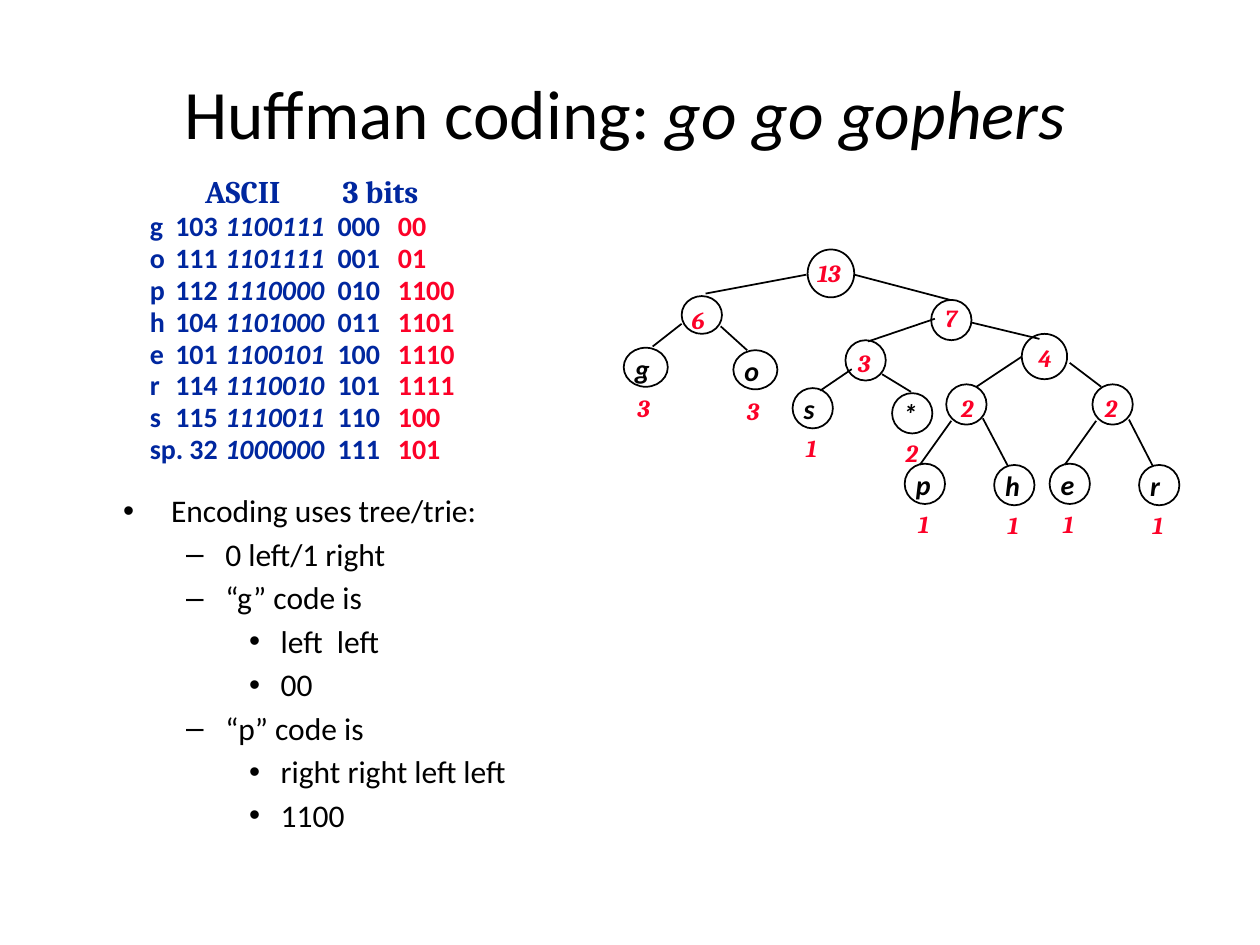
import pptx
import pptx.util
import pptx.dml.color
import pptx.enum.shapes
import pptx.enum.text
import pptx.oxml.ns
import lxml.etree

Inches = pptx.util.Inches
Pt = pptx.util.Pt
qn = pptx.oxml.ns.qn
SubElement = lxml.etree.SubElement


def paint(part, color):
    part.rgb = pptx.dml.color.RGBColor.from_string(color)


def write(para, text, color, **form):
    run = para.add_run()
    run.text = text
    paint(run.font.color, color)
    for key, value in form.items():
        setattr(run.font, key, value)


black, blue, red = "000000", "00279F", "FC0128"
letter = dict(name="Calibri", size=Pt(16), bold=True, italic=True)
number = dict(name="Cambria", size=Pt(14), bold=True, italic=True)

deck = pptx.Presentation()
deck.slide_width, deck.slide_height = Inches(10), Inches(7.5)
slide = deck.slides.add_slide(deck.slide_layouts[6])
shapes = slide.shapes

frame = shapes.add_textbox(Inches(0.83), Inches(0.5), Inches(8.26), Inches(0.78)).text_frame
frame.word_wrap = True
frame.vertical_anchor = pptx.enum.text.MSO_ANCHOR.MIDDLE
para = frame.paragraphs[0]
para.alignment = pptx.enum.text.PP_ALIGN.CENTER
for text, slant in [("Huffman coding: ", False), ("go go gophers", True)]:
    write(para, text, black, name="Calibri", size=Pt(39.6), italic=slant)

points = [
    (0, "Encoding uses tree/trie:"),
    (1, "0 left/1 right"),
    (1, "“g” code is"),
    (2, "left  left"),
    (2, "00"),
    (1, "“p” code is"),
    (2, "right right left left"),
    (2, "1100"),
]
levels = [(0.38, -0.38, "•"), (0.81, -0.31, "–"), (1.25, -0.25, "•")]
frame = shapes.add_textbox(Inches(0.88), Inches(3.85), Inches(4.04), Inches(3.48)).text_frame
frame.word_wrap = True
for index, (level, text) in enumerate(points):
    para = frame.add_paragraph() if index else frame.paragraphs[0]
    para.level = level
    para.space_before = Pt(3.25)
    left, hang, mark = levels[level]
    props = para._p.get_or_add_pPr()
    props.set("marL", str(Inches(left)))
    props.set("indent", str(Inches(hang)))
    SubElement(props, qn("a:buFont")).set("typeface", "Arial")
    SubElement(props, qn("a:buChar")).set("char", mark)
    write(para, text, black, name="Calibri", size=Pt(18))

codes = [
    ("g", "103", "1100111", "000", "00"),
    ("o", "111", "1101111", "001", "01"),
    ("p", "112", "1110000", "010", "1100"),
    ("h", "104", "1101000", "011", "1101"),
    ("e", "101", "1100101", "100", "1110"),
    ("r", "114", "1110010", "101", "1111"),
    ("s", "115", "1110011", "110", "100"),
    ("sp.", "32", "1000000", "111", "101"),
]
head_tabs = [(0.44, "l"), (1.53, "l")]
code_tabs = [(0.54, "r"), (0.6, "l"), (1.49, "l"), (1.97, "l")]
frame = shapes.add_textbox(Inches(1.09), Inches(1.34), Inches(3.99), Inches(2.53)).text_frame
frame.word_wrap = True
para = frame.paragraphs[0]
write(para, "\tASCII\t3 bits", blue, name="Cambria", size=Pt(18), bold=True)
for sign, value, ascii_bits, bits, code in codes:
    para = frame.add_paragraph()
    parts = [
        (f"{sign}\t{value}\t", blue, False),
        (f"{ascii_bits}\t", blue, True),
        (f"{bits}\t", blue, False),
        (code, red, False),
    ]
    for text, color, slant in parts:
        write(para, text, color, **{**letter, "italic": slant})
for index, para in enumerate(frame.paragraphs):
    para.line_spacing = 0.95
    stops = SubElement(para._p.get_or_add_pPr(), qn("a:tabLst"))
    for place, side in code_tabs if index else head_tabs:
        stop = SubElement(stops, qn("a:tab"))
        stop.set("pos", str(Inches(place)))
        stop.set("algn", side)

edges = [
    (5.6, 2.33, 6.4, 2.18), (7.54, 2.38, 6.78, 2.18),
    (5.41, 2.57, 5.18, 2.75), (5.72, 2.59, 5.93, 2.78),
    (6.89, 2.71, 7.42, 2.53), (7.71, 2.56, 8.25, 2.69),
    (6.76, 2.93, 6.51, 3.1), (7, 2.97, 7.23, 3.11),
    (8.11, 2.83, 7.75, 3.07), (8.49, 2.88, 8.74, 3.07),
    (7.55, 3.34, 7.3, 3.69), (7.8, 3.32, 8, 3.7),
    (8.7, 3.34, 8.45, 3.69), (8.96, 3.33, 9.15, 3.7),
]
for ends in edges:
    edge = shapes.add_connector(pptx.enum.shapes.MSO_CONNECTOR.STRAIGHT, *map(Inches, ends))
    paint(edge.line.color, black)
    edge.line.width = Pt(1)
    SubElement(edge._element.spPr, qn("a:effectLst"))

leaves = [
    ("g", "3", 4.95, 2.76, 0.35, 0.31),
    ("o", "3", 5.82, 2.78, 0.35, 0.31),
    ("s", "1", 6.29, 3.08, 0.32, 0.32),
    ("*", "2", 7.08, 3.12, 0.32, 0.32),
    ("p", "1", 7.18, 3.68, 0.32, 0.32),
    ("h", "1", 7.89, 3.69, 0.32, 0.32),
    ("e", "1", 8.33, 3.68, 0.32, 0.32),
    ("r", "1", 9.04, 3.69, 0.32, 0.32),
]
inner = [
    ("13", 6.41, 1.98, 0.37, 0.38, 6.39, 2, 0.53),
    ("6", 5.41, 2.35, 0.32, 0.3, 5.39, 2.37, 0.46),
    ("7", 7.39, 2.38, 0.32, 0.32, 7.4, 2.36, 0.37),
    ("3", 6.71, 2.7, 0.32, 0.32, 6.71, 2.71, 0.37),
    ("4", 8.11, 2.65, 0.36, 0.36, 8.14, 2.67, 0.32),
    ("2", 7.51, 3.05, 0.32, 0.32, 7.53, 3.07, 0.37),
    ("2", 8.67, 3.05, 0.32, 0.32, 8.67, 3.07, 0.37),
]
rings = [node[2:] for node in leaves] + [node[1:5] for node in inner]
labels = []
for sign, count, x, y, w, h in leaves:
    labels.append((sign, x - 0.01, y - 0.02, w + 0.02, 0.36, black, letter))
    labels.append((count, x + 0.01, y + 0.31, 0.37, 0.33, red, number))
for total, *ring, x, y, w in inner:
    labels.append((total, x, y, w, 0.33, red, number))

for ring in rings:
    node = shapes.add_shape(pptx.enum.shapes.MSO_SHAPE.OVAL, *map(Inches, ring))
    node.shadow.inherit = False
    node.fill.background()
    paint(node.line.color, black)
    node.line.width = Pt(1)
for text, x, y, w, h, color, form in labels:
    frame = shapes.add_textbox(Inches(x), Inches(y), Inches(w), Inches(h)).text_frame
    frame.word_wrap = True
    write(frame.paragraphs[0], text, color, **form)

deck.save("out.pptx")
